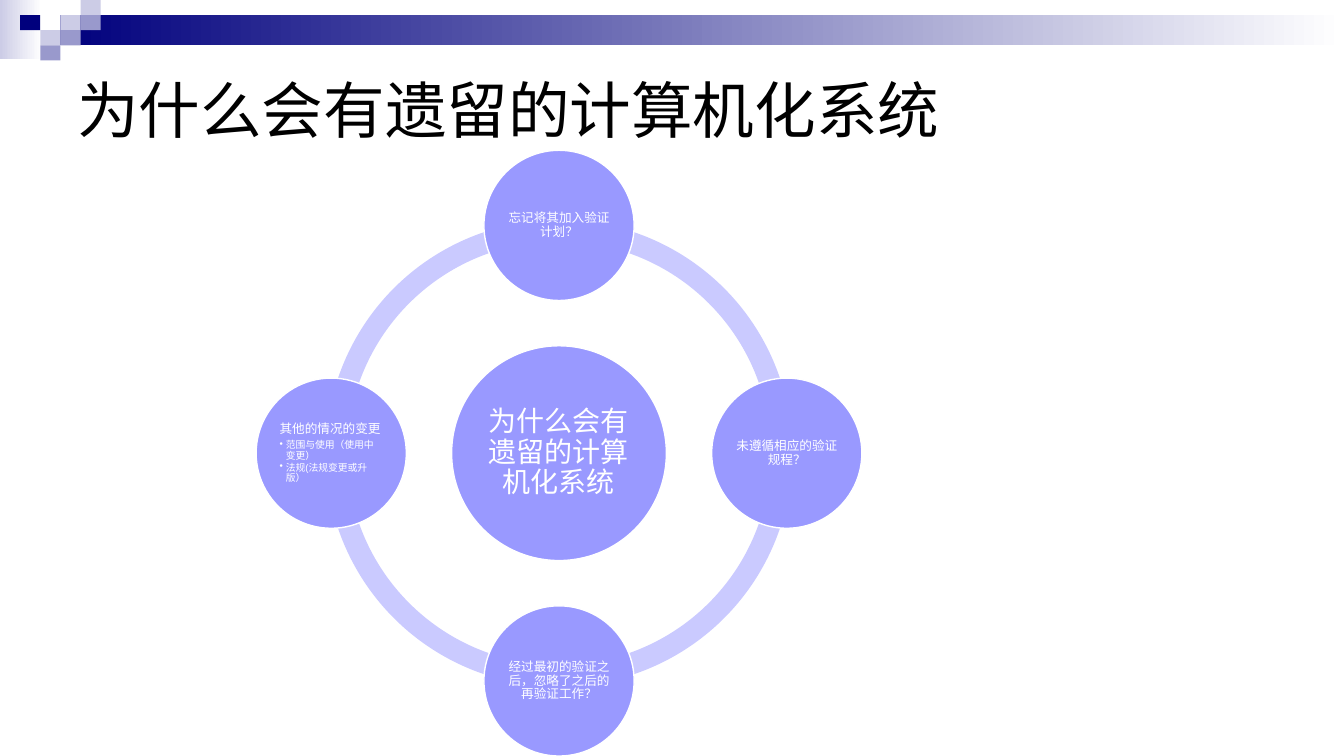
from math import cos, radians, sin

from lxml import etree
from pptx import Presentation
from pptx import util as u
from pptx.dml import color
from pptx.enum import shapes, text
from pptx.oxml import ns

Pt = u.Pt
KIND = shapes.MSO_SHAPE
MID = text.PP_ALIGN.CENTER
LEFT = text.PP_ALIGN.LEFT

deck = Presentation()
deck.slide_width, deck.slide_height = Pt(960), Pt(540)
page = deck.slides.add_slide(deck.slide_layouts[6])


def draw(kind, x, y, w, h, *hues):
    item = page.shapes.add_shape(kind, Pt(x), Pt(y), Pt(w), Pt(h))
    item.shadow.inherit = False
    item.line.fill.background()
    if len(hues) == 1:
        item.fill.solid()
        item.fill.fore_color.rgb = color.RGBColor.from_string(hues[0])
    else:
        item.fill.gradient()
        item.fill.gradient_angle = 0
        for stop, hue in zip(item.fill.gradient_stops, hues):
            stop.color.rgb = color.RGBColor.from_string(hue)
    return item


def write(x, y, w, h, pad, hue, rows):
    box = page.shapes.add_textbox(Pt(x), Pt(y), Pt(w), Pt(h))
    frame = box.text_frame
    form = dict(word_wrap=True, vertical_anchor=text.MSO_ANCHOR.MIDDLE,
                margin_left=Pt(pad), margin_right=Pt(pad),
                margin_top=Pt(pad / 2), margin_bottom=Pt(pad / 2))
    for key, value in form.items():
        setattr(frame, key, value)
    for i, (words, size, form) in enumerate(rows):
        para = frame.add_paragraph() if i else frame.paragraphs[0]
        for key, value in form.items():
            setattr(para, key, value)
        run = para.add_run()
        run.text = words
        run.font.name = "Arial"
        run.font.size = Pt(size)
        run.font.color.rgb = color.RGBColor.from_string(hue)
        if para.level:
            props = para._p.get_or_add_pPr()
            props.set("marL", str(Pt(4.5)))
            props.set("indent", str(Pt(-4.5)))
            etree.SubElement(props, ns.qn("a:buChar")).set("char", "•")


NAVY, PALE, GREY = "00007D", "CCCCE6", "9999CC"
WHITE, LILAC, RING = "FFFFFF", "9999FF", "CACAFF"

draw(KIND.RECTANGLE, 0, 0, 30, 42, PALE, WHITE)
draw(KIND.RECTANGLE, 43.2, 10.8, 916.8, 21.6, NAVY, WHITE)

wide, high = 14.4, 10.8
tiles = [(3, 1, PALE), (4, 0, PALE), (4, 1, GREY), (2, 2, PALE),
         (1, 1, NAVY), (3, 2, GREY), (2, 3, GREY)]
for col, row, hue in tiles:
    draw(KIND.RECTANGLE, col * wide, row * high, wide, high, hue)

midx, midy = 399.3, 323.7
span = 333.4
for turn in (180, 90, 0, 270):
    arc = draw(KIND.BLOCK_ARC, midx - span / 2, midy - span / 2, span, span, RING)
    arc.adjustments[0] = turn * 0.6
    arc.adjustments[1] = (turn + 90) % 360 * 0.6
    arc.adjustments[2] = 0.046

topic = "为什么会有遗留的计算机化系统"
hub = dict(alignment=MID, line_spacing=0.9, space_after=Pt(7))
note = dict(alignment=MID, line_spacing=0.9, space_after=Pt(3.15))
head = dict(note, alignment=LEFT)
point = dict(head, level=1, space_after=Pt(1.05))

reach, small = 162.7, 107.3
discs = [
    (0, 0, 153.4, 108, 2, [(topic, 20, hub)]),
    (reach, 270, small, 75.6, 0.9, [("忘记将其加入验证计划？", 9, note)]),
    (reach, 0, small, 75.6, 0.9, [("未遵循相应的验证规程？", 9, note)]),
    (reach, 90, small, 75.6, 0.9,
     [("经过最初的验证之后，忽略了之后的再验证工作？", 9, note)]),
    (reach, 180, small, 75.6, 0.9,
     [("其他的情况的变更", 9, head),
      ("范围与使用（使用中变更）", 7, point),
      ("法规(法规变更或升版）", 7, point)]),
]
for far, turn, size, area, pad, rows in discs:
    x = midx + far * cos(radians(turn))
    y = midy + far * sin(radians(turn))
    disc = draw(KIND.OVAL, x - size / 2, y - size / 2, size, size, LILAC)
    disc.line.color.rgb = color.RGBColor.from_string(WHITE)
    disc.line.width = Pt(1)
    write(x - area / 2, y - area / 2, area, area, pad, WHITE, rows)

write(48, 36, 864, 84, 7.2, "000000", [(topic, 44, dict(alignment=LEFT))])

deck.save("out.pptx")
